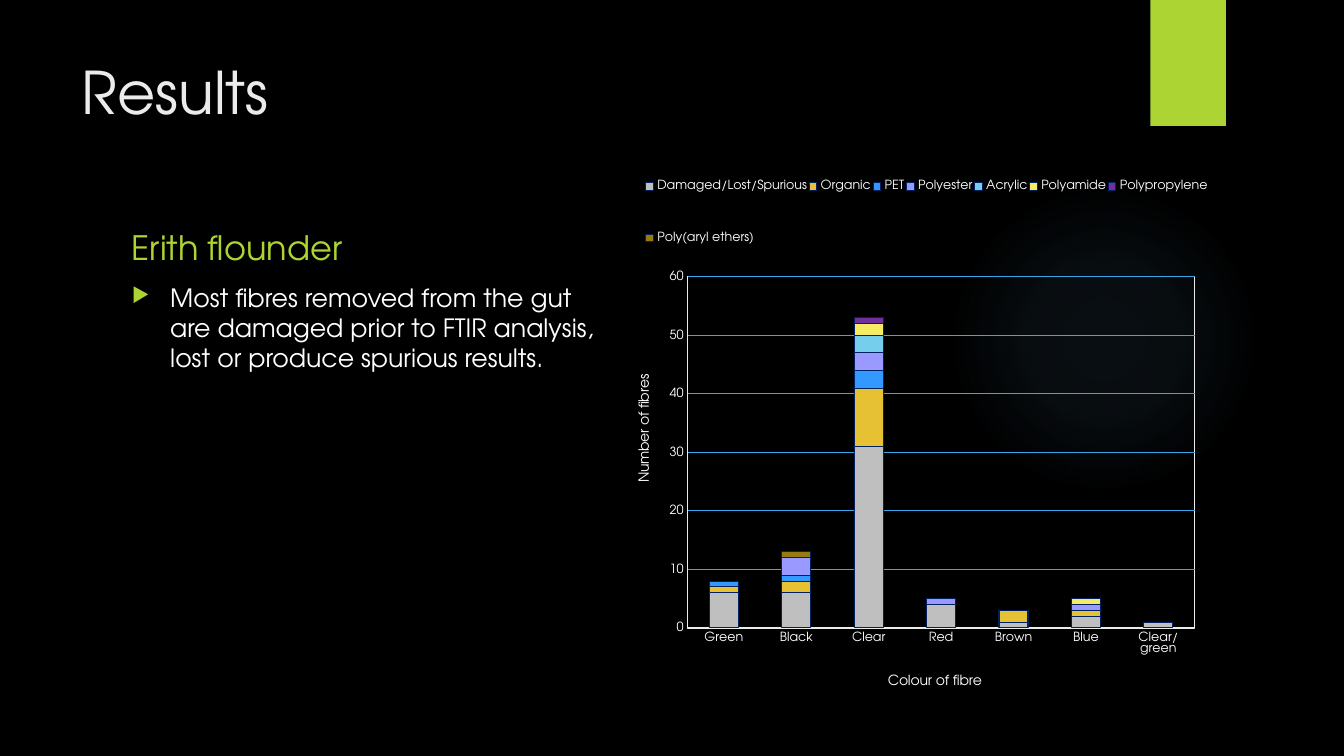
from lxml.etree import SubElement
from pptx import Presentation
from pptx.chart.data import CategoryChartData
from pptx.dml.color import RGBColor
from pptx.enum.chart import XL_CHART_TYPE, XL_LEGEND_POSITION, XL_TICK_MARK
from pptx.enum.shapes import MSO_SHAPE
from pptx.enum.text import MSO_ANCHOR
from pptx.oxml import parse_xml
from pptx.oxml.ns import nsdecls, qn
from pptx.util import Inches, Pt

FONT = "TeX Gyre Adventor"
COLORS = {
    "background": "000000", "glow": "7AC4F0", "accent": "ACD433",
    "title": "EBEBEB", "text": "FFFFFF", "grid": "38A6E9", "outline": "002060",
}
FIBRE_COLOURS = ["Green", "Black", "Clear", "Red", "Brown", "Blue", "Clear/green"]
MATERIALS = [
    ("Damaged/Lost/Spurious", "BFBFBF", (6, 6, 31, 4, 1, 2, 1)),
    ("Organic", "E6C133", (1, 2, 10, 0, 2, 1, 0)),
    ("PET", "3399FF", (1, 1, 3, 0, 0, 0, 0)),
    ("Polyester", "9999FF", (0, 3, 3, 1, 0, 1, 0)),
    ("Acrylic", "75CEEC", (0, 0, 3, 0, 0, 0, 0)),
    ("Polyamide", "F5EB65", (0, 0, 2, 0, 0, 1, 0)),
    ("Polypropylene", "7030A0", (0, 0, 1, 0, 0, 0, 0)),
    ("Poly(aryl ethers)", "967B12", (0, 1, 0, 0, 0, 0, 0)),
]


def rgb(name):
    return RGBColor.from_string(COLORS[name])


def style_font(font, size, color):
    font.name = FONT
    font.size = Pt(size)
    font.bold = False
    font.color.rgb = rgb(color)


def style_line(line, color):
    line.color.rgb = rgb(color)
    line.width = Pt(0.75)


def add_decoration(slide, shape_type, left, top, width, height):
    decoration = slide.shapes.add_shape(
        shape_type, Inches(left), Inches(top), Inches(width), Inches(height))
    decoration.shadow.inherit = False
    decoration.line.fill.background()
    decoration.fill.solid()
    decoration.fill.fore_color.rgb = rgb("accent")
    return decoration


def add_glow(slide, left, top, size):
    glow = add_decoration(slide, MSO_SHAPE.OVAL, left, top, size, size)
    stops = "".join(
        f'<a:gs pos="{pos * 1000}"><a:srgbClr val="{COLORS["glow"]}">'
        f'<a:alpha val="{alpha * 1000}"/></a:srgbClr></a:gs>'
        for pos, alpha in ((0, 7), (36, 6), (69, 0)))
    gradient = parse_xml(
        f'<a:gradFill {nsdecls("a")} rotWithShape="1"><a:gsLst>{stops}</a:gsLst>'
        '<a:path path="circle"><a:fillToRect l="50000" t="50000" r="50000" b="50000"/>'
        '</a:path></a:gradFill>')
    properties = glow.element.spPr
    properties.replace(properties.find(qn("a:solidFill")), gradient)


def add_title(slide, left, top, width, height):
    title = slide.shapes.title
    title.left, title.top = Inches(left), Inches(top)
    title.width, title.height = Inches(width), Inches(height)
    frame = title.text_frame
    frame.text = "Results"
    frame.vertical_anchor = MSO_ANCHOR.TOP
    paragraph = frame.paragraphs[0]
    paragraph.alignment = 1
    style_font(paragraph.runs[0].font, 42, "title")


def add_text(slide, text, size, color, anchor, left, top, width, height):
    box = slide.shapes.add_textbox(
        Inches(left), Inches(top), Inches(width), Inches(height))
    frame = box.text_frame
    frame.word_wrap = True
    frame.vertical_anchor = anchor
    frame.text = text
    paragraph = frame.paragraphs[0]
    style_font(paragraph.runs[0].font, size, color)
    return paragraph


def add_finding(slide, left, top, width):
    add_text(slide, "Erith flounder", 24, "accent", MSO_ANCHOR.BOTTOM,
             left, top, width, 0.63)
    finding = add_text(
        slide,
        "Most fibres removed from the gut are damaged prior to FTIR analysis, "
        "lost or produce spurious results.",
        18, "text", MSO_ANCHOR.TOP, left, top + 0.68, width, 4.09)
    properties = finding._p.get_or_add_pPr()
    properties.set("marL", str(Inches(0.38)))
    properties.set("indent", str(-Inches(0.38)))
    bullet_color = SubElement(properties, qn("a:buClr"))
    SubElement(bullet_color, qn("a:srgbClr")).set("val", COLORS["accent"])
    SubElement(properties, qn("a:buSzPct")).set("val", "80000")
    SubElement(properties, qn("a:buChar")).set("char", "▶")


def set_layout(parent, before, target=None, **fractions):
    for old in parent.findall(qn("c:layout")):
        parent.remove(old)
    layout = SubElement(parent, qn("c:layout"))
    manual = SubElement(layout, qn("c:manualLayout"))
    if target:
        SubElement(manual, qn("c:layoutTarget")).set("val", target)
    for axis in ("x", "y"):
        SubElement(manual, qn(f"c:{axis}Mode")).set("val", "edge")
    for name, value in fractions.items():
        SubElement(manual, qn(f"c:{name}")).set("val", str(value))
    if before is None:
        parent.insert(0, layout)
    else:
        parent.find(qn(before)).addnext(layout)


def style_axis(axis, title, x, y):
    axis.major_tick_mark = axis.minor_tick_mark = XL_TICK_MARK.NONE
    style_font(axis.tick_labels.font, 9, "text")
    frame = axis.axis_title.text_frame
    frame.text = title
    style_font(frame.paragraphs[0].runs[0].font, 10, "text")
    set_layout(axis.axis_title._element, "c:tx", x=x, y=y)


def add_fibre_chart(slide, left, top, width, height):
    data = CategoryChartData()
    data.categories = FIBRE_COLOURS
    for name, _, counts in MATERIALS:
        data.add_series(name, counts)
    chart = slide.shapes.add_chart(
        XL_CHART_TYPE.COLUMN_STACKED, Inches(left), Inches(top),
        Inches(width), Inches(height), data).chart
    chart.has_title = False
    style_font(chart.font, 10, "text")

    plot = chart.plots[0]
    plot.gap_width = 150
    plot.overlap = 100
    plot.vary_by_categories = False
    for series, (_, color, _) in zip(plot.series, MATERIALS):
        series.format.fill.solid()
        series.format.fill.fore_color.rgb = RGBColor.from_string(color)
        style_line(series.format.line, "outline")

    style_axis(chart.category_axis, "Colour of fibre", 0.447, 0.885)
    style_line(chart.category_axis.format.line, "title")
    counts_axis = chart.value_axis
    style_axis(counts_axis, "Number of fibres", 0.019, 0.398)
    counts_axis.minimum_scale, counts_axis.maximum_scale = 0, 60
    counts_axis.major_unit = 10
    counts_axis.format.line.fill.background()
    style_line(counts_axis.major_gridlines.format.line, "grid")

    chart.has_legend = True
    legend = chart.legend
    legend.position = XL_LEGEND_POSITION.TOP
    legend.include_in_layout = False
    style_font(legend.font, 9, "text")
    set_layout(legend._element, "c:legendPos", x=0.035, y=0.02, w=0.965, h=0.235)

    plot_area = chart._chartSpace.chart.plotArea
    set_layout(plot_area, None, "inner", x=0.11, y=0.243, w=0.864, h=0.573)
    plot_area.append(parse_xml(
        f'<c:spPr {nsdecls("c", "a")}><a:noFill/><a:ln w="{Pt(0.75)}"><a:solidFill>'
        f'<a:srgbClr val="{COLORS["title"]}"/></a:solidFill></a:ln></c:spPr>'))


def main():
    deck = Presentation()
    deck.slide_width, deck.slide_height = Inches(13.33), Inches(7.5)
    slide = deck.slides.add_slide(deck.slide_layouts[5])
    slide.background.fill.solid()
    slide.background.fill.fore_color.rgb = rgb("background")
    add_glow(slide, 9.41, 1.83, 3.08)
    add_decoration(slide, MSO_SHAPE.RECTANGLE, 11.41, 0, 0.75, 1.25)
    add_title(slide, 0.71, 0.5, 10.29, 1.53)
    add_finding(slide, 1.21, 2.07, 4.81)
    add_fibre_chart(slide, 6.18, 1.27, 5.82, 6.08)
    deck.save("out.pptx")


if __name__ == "__main__":
    main()
